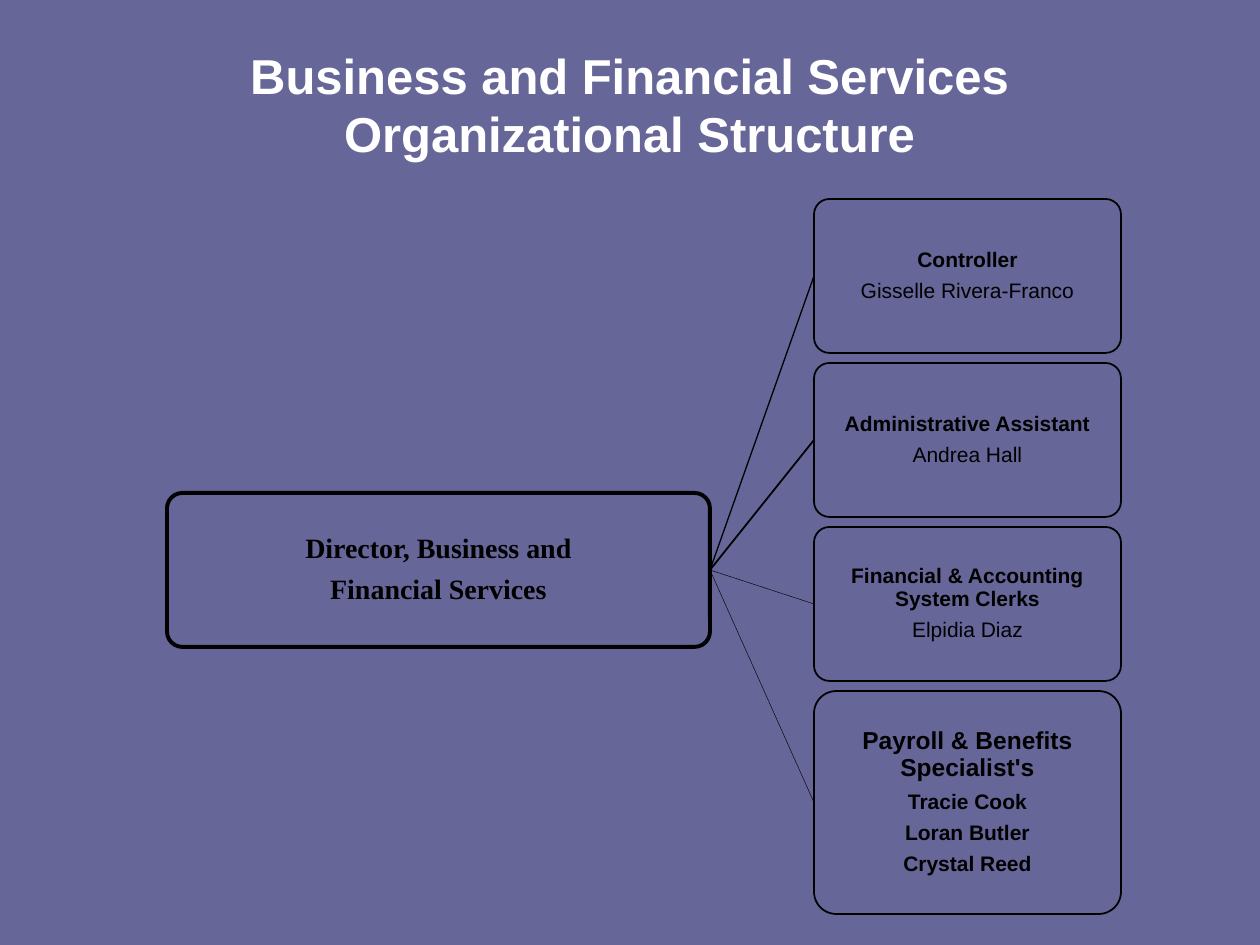
from dataclasses import dataclass

import pptx
import pptx.dml.color
import pptx.enum.shapes
import pptx.enum.text
import pptx.oxml.ns
import pptx.util
from lxml import etree

EMU_PER_PX = 914400 / 126
RIGHT_SIDE, LEFT_SIDE = 3, 1


@dataclass(frozen=True)
class Theme:
    background: str = "666699"
    title_color: str = "FFFFFF"
    ink: str = "000000"
    sans: str = "Arial"
    serif: str = "Times New Roman"
    title_size: int = 28
    director_size: int = 16
    heading_size: int = 14
    body_size: int = 12


THEME = Theme()

# Heading, heading size, names, names in bold, box height, connector width
TEAMS = [
    ("Controller", THEME.body_size, ["Gisselle Rivera-Franco"], False, 154, 0.75),
    ("Administrative Assistant", THEME.body_size, ["Andrea Hall"], False, 154, 1),
    ("Financial & Accounting System Clerks", THEME.body_size,
     ["Elpidia Diaz"], False, 154, 0.25),
    ("Payroll & Benefits Specialist's", THEME.heading_size,
     ["Tracie Cook", "Loran Butler", "Crystal Reed"], True, 223, 0.25),
]


def px(n):
    return pptx.util.Emu(round(n * EMU_PER_PX))


def rgb(color):
    return pptx.dml.color.RGBColor.from_string(color)


def prepare_frame(sp, inset=1, top=1):
    tf = sp.text_frame
    tf.word_wrap = True
    tf.vertical_anchor = pptx.enum.text.MSO_ANCHOR.MIDDLE
    tf.margin_left = tf.margin_right = tf.margin_bottom = px(inset)
    tf.margin_top = px(top)
    return tf


def add_text(tf, text, *, size, font=THEME.sans, color=THEME.ink, bold=True,
             spacing=0.9, after=0.4):
    """Add a centred paragraph; after is the space below it, in type sizes."""
    p = tf.paragraphs[0]
    if p.runs:
        p = tf.add_paragraph()
    p.alignment = pptx.enum.text.PP_ALIGN.CENTER
    p.line_spacing = spacing
    p.space_after = pptx.util.Pt(round(size * after, 1))
    r = p.add_run()
    r.text = text
    r.font.name = font
    r.font.size = pptx.util.Pt(size)
    r.font.bold = bold
    r.font.color.rgb = rgb(color)


def add_title(s, lines):
    sp = s.shapes.add_textbox(px(10), px(10), px(1239), px(174))
    tf = prepare_frame(sp, inset=0, top=15)
    for line in lines:
        add_text(tf, line, size=THEME.title_size, color=THEME.title_color,
                 spacing=pptx.util.Pt(33), after=0)


def add_box(s, left, top, width, height, line_width):
    sp = s.shapes.add_shape(pptx.enum.shapes.MSO_SHAPE.ROUNDED_RECTANGLE,
                            px(left), px(top), px(width), px(height))
    sp.adjustments[0] = 0.1
    sp.shadow.inherit = False
    sp.fill.background()
    sp.line.color.rgb = rgb(THEME.ink)
    sp.line.width = pptx.util.Pt(line_width)
    prepare_frame(sp)
    return sp


def connect(s, parent, child, line_width):
    line = s.shapes.add_connector(pptx.enum.shapes.MSO_CONNECTOR.STRAIGHT, 0, 0, 0, 0)
    line.begin_connect(parent, RIGHT_SIDE)
    line.end_connect(child, LEFT_SIDE)
    line.line.color.rgb = rgb(THEME.ink)
    line.line.width = pptx.util.Pt(line_width)
    etree.SubElement(line._element.spPr, pptx.oxml.ns.qn("a:effectLst"))


def add_director(s):
    sp = add_box(s, 167, 493, 543, 154, 2.25)
    for line in ("Director, Business and", "Financial Services"):
        add_text(sp.text_frame, line, size=THEME.director_size, font=THEME.serif)
    return sp


def add_teams(s, director):
    top, gap = 199, 10
    for heading, size, names, bold, height, line_width in TEAMS:
        sp = add_box(s, 814, top, 307, height, 1)
        add_text(sp.text_frame, heading, size=size)
        for name in names:
            add_text(sp.text_frame, name, size=THEME.body_size, bold=bold)
        connect(s, director, sp, line_width)
        top += height + gap


def main():
    prs = pptx.Presentation()
    prs.slide_width, prs.slide_height = px(1260), px(945)
    s = prs.slides.add_slide(prs.slide_layouts[6])
    s.background.fill.solid()
    s.background.fill.fore_color.rgb = rgb(THEME.background)
    add_title(s, ["Business and Financial Services", "Organizational Structure"])
    add_teams(s, add_director(s))
    prs.save("out.pptx")


if __name__ == "__main__":
    main()
